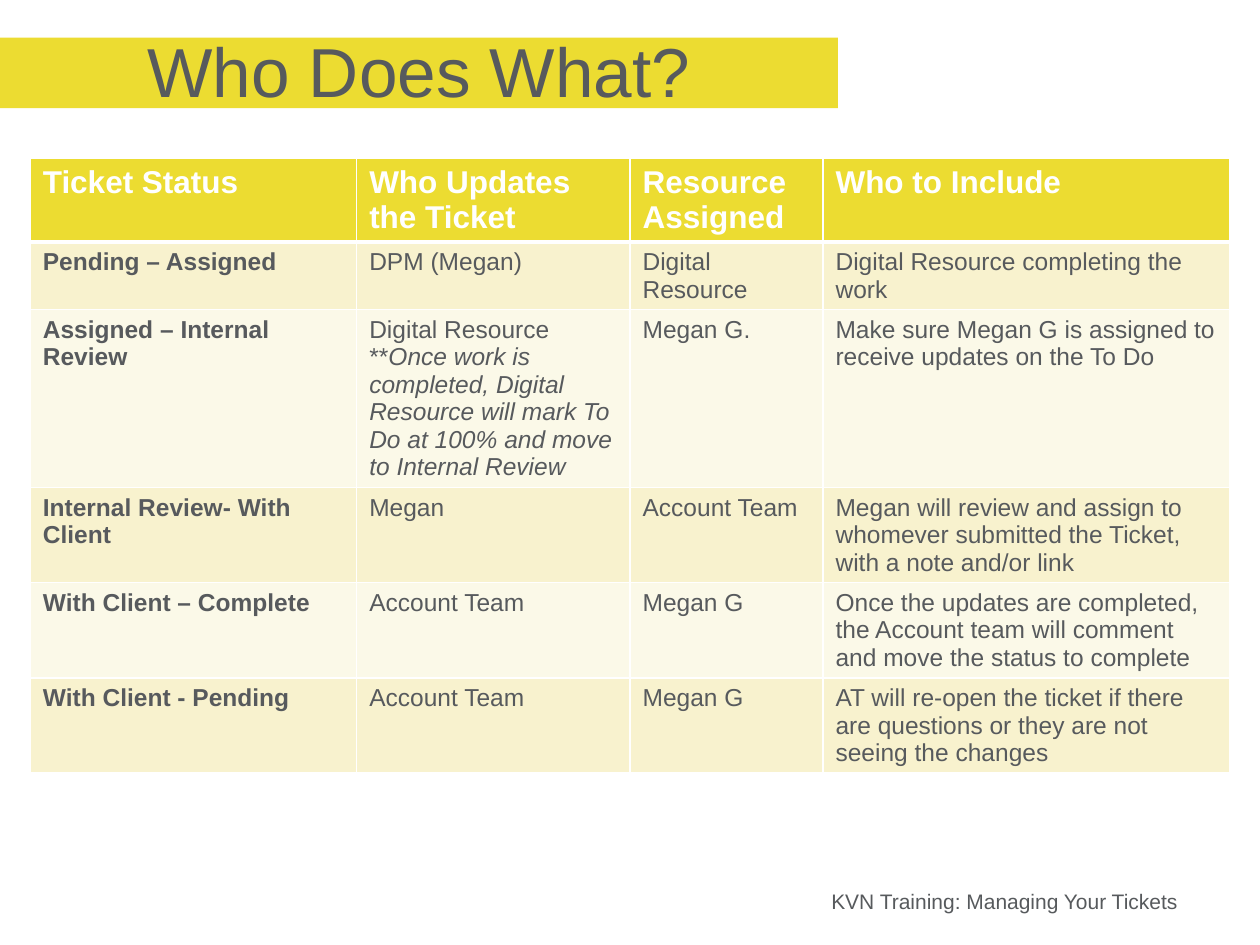
import pptx
import pptx.dml.color
import pptx.enum.text
import pptx.oxml.ns
import pptx.util
from lxml import etree

Cm, Pt = pptx.util.Cm, pptx.util.Pt
RGB = pptx.dml.color.RGBColor
ALIGN = pptx.enum.text.PP_ALIGN
qn = pptx.oxml.ns.qn

GOLD = RGB(0xEC, 0xDC, 0x31)
SAND = RGB(0xF8, 0xF2, 0xCE)
CREAM = RGB(0xFB, 0xF9, 0xE8)
GREY = RGB(0x57, 0x5A, 0x5D)
WHITE = RGB(0xFF, 0xFF, 0xFF)

HEAD = ["Ticket Status", "Who Updates the Ticket", "Resource Assigned", "Who to Include"]
NOTE = ("**", "Once work is completed, Digital Resource will mark To Do at 100% "
        "and move to Internal Review")
ROWS = [
    ["Pending – Assigned", "DPM (Megan)", "Digital Resource",
     "Digital Resource completing the work"],
    ["Assigned – Internal Review", "Digital Resource", "Megan G.",
     "Make sure Megan G is assigned to receive updates on the To Do"],
    ["Internal Review- With Client", "Megan", "Account Team",
     "Megan will review and assign to whomever submitted the Ticket, "
     "with a note and/or link"],
    ["With Client – Complete", "Account Team", "Megan G",
     "Once the updates are completed, the Account team will comment "
     "and move the status to complete"],
    ["With Client - Pending", "Account Team", "Megan G",
     "AT will re-open the ticket if there are questions "
     "or they are not seeing the changes"],
]
WIDTHS = [6.58, 5.51, 3.89, 8.2]


class Deck:
    def __init__(self, font):
        self.font = font
        self.prs = pptx.Presentation()
        self.prs.slide_width, self.prs.slide_height = Cm(25.4), Cm(19.05)
        self.slide = self.prs.slides.add_slide(self.prs.slide_layouts[1])

    def run(self, para, text, size, color, bold=False, italic=False):
        run = para.add_run()
        run.text = text
        look = {"name": self.font, "size": Pt(size), "bold": bold, "italic": italic}
        for key, value in look.items():
            setattr(run.font, key, value)
        run.font.color.rgb = color

    def place(self, shape, box):
        for key, value in zip(("left", "top", "width", "height"), box):
            setattr(shape, key, Cm(value))
        shape.text_frame.auto_size = pptx.enum.text.MSO_AUTO_SIZE.NONE

    def title(self, text, box):
        shape = self.slide.shapes.title
        self.place(shape, box)
        shape.fill.solid()
        shape.fill.fore_color.rgb = GOLD
        frame = shape.text_frame
        frame.margin_top = 0
        frame.vertical_anchor = pptx.enum.text.MSO_ANCHOR.MIDDLE
        frame.paragraphs[0].alignment = ALIGN.CENTER
        self.run(frame.paragraphs[0], text, 39.6, GREY)

    def footer(self, text, box):
        shape = self.slide.placeholders[1]
        self.place(shape, box)
        para = shape.text_frame.paragraphs[0]
        props = para._p.get_or_add_pPr()
        for key in ("marL", "indent"):
            props.set(key, "0")
        etree.SubElement(props, qn("a:buNone"))
        para.alignment = ALIGN.RIGHT
        para.space_before = Pt(0)
        self.run(para, text, 12, GREY)

    def edge(self, cell, base):
        """Draw white borders; base is the width of the bottom one in points."""
        props = cell._tc.get_or_add_tcPr()
        for side, width in {"L": 1, "R": 1, "T": 1, "B": base}.items():
            line = etree.SubElement(props, qn("a:ln" + side), w=str(Pt(width)))
            fill = etree.SubElement(line, qn("a:solidFill"))
            etree.SubElement(fill, qn("a:srgbClr"), val=str(WHITE))

    def table(self, rows, widths, left, top, high):
        shape = self.slide.shapes.add_table(
            len(rows), len(widths), Cm(left), Cm(top), Cm(sum(widths)), Cm(high * len(rows)))
        grid = shape.table
        for col, width in zip(grid.columns, widths):
            col.width = Cm(width)
        for r, row in enumerate(rows):
            head = r == 0
            for c, text in enumerate(row):
                cell = grid.cell(r, c)
                self.edge(cell, 3 if head else 1)
                cell.fill.solid()
                cell.fill.fore_color.rgb = GOLD if head else SAND if r % 2 else CREAM
                self.run(cell.text_frame.paragraphs[0], text, 18 if head else 14,
                         WHITE if head else GREY, bold=head or c == 0)
        return grid

    def note(self, cell, mark, text):
        para = cell.text_frame.add_paragraph()
        self.run(para, mark, 14, GREY)
        self.run(para, text, 14, GREY, italic=True)


def main():
    deck = Deck("Arial")
    deck.title("Who Does What?", (0, 0.76, 16.89, 1.42))
    grid = deck.table([HEAD] + ROWS, WIDTHS, left=0.61, top=3.2, high=1.04)
    deck.note(grid.cell(2, 1), *NOTE)
    deck.footer("KVN Training: Managing Your Tickets", (1.27, 17.78, 22.73, 0.86))
    deck.prs.save("out.pptx")


if __name__ == "__main__":
    main()
